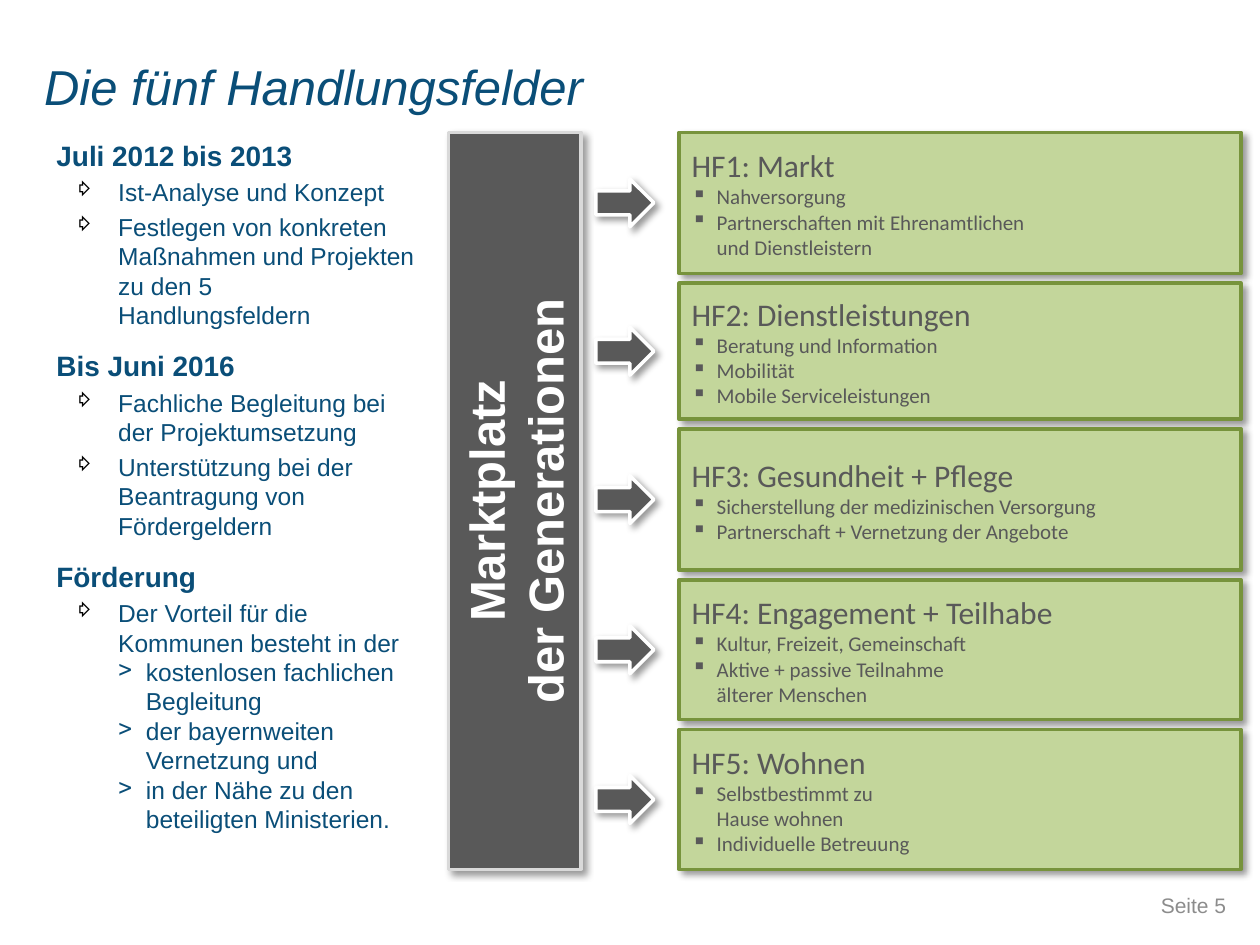
"""Build the slide on the five fields of action."""
from copy import deepcopy

from lxml import etree
from pptx import Presentation, util as u
from pptx.dml.color import RGBColor
from pptx.enum import shapes, text
from pptx.oxml.ns import qn

COLORS = {"navy": "0A4E78", "dark": "595959", "white": "FFFFFF", "silver": "D9D9D9",
          "leaf": "C3D69B", "moss": "77933C", "grey": "8C8C8C", "black": "000000"}
ALIGN, ANCHOR, KIND = text.PP_ALIGN, text.MSO_ANCHOR, shapes.MSO_SHAPE

FORMATS = {
    "title": {"font": {"name": "Arial", "size": u.Pt(28), "italic": True}, "color": "navy"},
    "phase": {"font": {"name": "Arial", "size": u.Pt(16), "bold": True}, "color": "navy",
              "before": 11},
    "step": {"font": {"name": "Arial", "size": u.Pt(14)}, "color": "navy", "before": 3,
             "bullet": ("⇨", 0.49, 0.34, "black", 65)},
    "benefit": {"font": {"name": "Arial", "size": u.Pt(14)}, "color": "navy",
                "bullet": (">", 0.71, 0.22, "navy", 100)},
    "market": {"font": {"name": "Arial", "size": u.Pt(28), "bold": True}, "color": "white",
               "align": ALIGN.CENTER},
    "field": {"font": {"name": "Calibri", "size": u.Pt(18)}, "color": "dark"},
    "topic": {"font": {"name": "Calibri", "size": u.Pt(12)}, "color": "dark",
              "bullet": ("▪", 0.2, 0.2, "dark", 100)},
    "page": {"font": {"name": "Arial", "size": u.Pt(12)}, "color": "grey",
             "align": ALIGN.RIGHT},
}

PHASES = [
    ("phase", "Juli 2012 bis 2013"),
    ("step", "Ist-Analyse und Konzept"),
    ("step", "Festlegen von konkreten Maßnahmen und Projekten zu den 5\vHandlungsfeldern"),
    ("phase", "Bis Juni 2016"),
    ("step", "Fachliche Begleitung bei\vder Projektumsetzung"),
    ("step", "Unterstützung bei der Beantragung von Fördergeldern"),
    ("phase", "Förderung"),
    ("step", "Der Vorteil für die Kommunen besteht in der"),
    ("benefit", "kostenlosen fachlichen\vBegleitung"),
    ("benefit", "der bayernweiten\vVernetzung und"),
    ("benefit", "in der Nähe zu den\vbeteiligten Ministerien."),
]

FIELDS = [
    (11.2, "HF1: Markt",
     ["Nahversorgung", "Partnerschaften mit Ehrenamtlichen\vund Dienstleistern"]),
    (10.8, "HF2: Dienstleistungen",
     ["Beratung und Information", "Mobilität", "Mobile Serviceleistungen"]),
    (11.2, "HF3: Gesundheit + Pflege",
     ["Sicherstellung der medizinischen Versorgung",
      "Partnerschaft + Vernetzung der Angebote"]),
    (11.1, "HF4: Engagement + Teilhabe",
     ["Kultur, Freizeit, Gemeinschaft", "Aktive + passive Teilnahme\välterer Menschen"]),
    (11.1, "HF5: Wohnen",
     ["Selbstbestimmt zu\vHause wohnen", "Individuelle Betreuung"]),
]


class Deck:
    """Hold the style, the current slide and its grid of 100 columns by 75 rows."""

    def __init__(self):
        """Open a title-only slide."""
        self.prs = Presentation()
        self.prs.slide_width, self.prs.slide_height = u.Inches(10), u.Inches(7.5)
        self.slide = self.prs.slides.add_slide(self.prs.slide_layouts[5])

    def place(self, col, row, cols, rows):
        """Turn grid units into left, top, width and height."""
        across, down = self.prs.slide_width / 100, self.prs.slide_height / 75
        return [round(n * unit) for n, unit in
                ((col, across), (row, down), (cols, across), (rows, down))]

    def bullet(self, paragraph, mark, margin, hang, color, percent):
        """Give a paragraph a hanging bullet."""
        props = paragraph._p.get_or_add_pPr()
        props.set("marL", str(u.Inches(margin)))
        props.set("indent", str(-u.Inches(hang)))
        tint = etree.SubElement(props, qn("a:buClr"))
        etree.SubElement(tint, qn("a:srgbClr"), val=COLORS[color])
        etree.SubElement(props, qn("a:buSzPct"), val=str(percent * 1000))
        etree.SubElement(props, qn("a:buChar"), char=mark)

    def fill_text(self, frame, lines, anchor=ANCHOR.MIDDLE):
        """Fill a text frame with (format, wording) lines."""
        frame.word_wrap, frame.vertical_anchor = True, anchor
        for index, (kind, wording) in enumerate(lines):
            style = FORMATS[kind]
            paragraph = frame.add_paragraph() if index else frame.paragraphs[0]
            paragraph.text = wording
            if "bullet" in style:
                self.bullet(paragraph, *style["bullet"])
            paragraph.alignment = style.get("align", ALIGN.LEFT)
            paragraph.space_before = u.Pt(style.get("before", 0) if index else 0)
            for run in paragraph.runs:
                for name, value in style["font"].items():
                    setattr(run.font, name, value)
                run.font.color.rgb = RGBColor.from_string(COLORS[style["color"]])
            for line_break in paragraph._p.findall(qn("a:br")):
                line_break.append(deepcopy(paragraph.runs[0]._r.rPr))

    def title(self, wording, *area):
        """Move and format the title placeholder."""
        heading = self.slide.shapes.title
        heading.left, heading.top, heading.width, heading.height = self.place(*area)
        insets = {"margin_left": 0, "margin_top": 0,
                  "margin_right": u.Inches(0.1), "margin_bottom": u.Inches(0.05)}
        for name, value in insets.items():
            setattr(heading.text_frame, name, value)
        self.fill_text(heading.text_frame, [("title", wording)], ANCHOR.TOP)

    def note(self, lines, *area, anchor=ANCHOR.TOP):
        """Add a text box."""
        box = self.slide.shapes.add_textbox(*self.place(*area))
        self.fill_text(box.text_frame, lines, anchor)

    def block(self, kind, fill, edge, *area, lines=(), turn=0):
        """Add a filled, outlined shape with a soft shadow."""
        shape = self.slide.shapes.add_shape(kind, *self.place(*area))
        shape.rotation = turn
        shape.fill.solid()
        shape.fill.fore_color.rgb = RGBColor.from_string(COLORS[fill])
        shape.line.color.rgb = RGBColor.from_string(COLORS[edge])
        shape.line.width = u.Pt(2)
        shape.shadow.inherit = False
        effects = shape._element.spPr.find(qn("a:effectLst"))
        shadow = etree.SubElement(effects, qn("a:outerShdw"), blurRad=str(u.Pt(4)),
                                  dist=str(u.Pt(3)), dir="2700000", algn="tl",
                                  rotWithShape="0")
        tint = etree.SubElement(shadow, qn("a:srgbClr"), val=COLORS["black"])
        etree.SubElement(tint, qn("a:alpha"), val="40000")
        self.fill_text(shape.text_frame, lines)


def main():
    """Compose and save the slide."""
    deck = Deck()
    top, span = 10.5, 58.5
    deck.title("Die fünf Handlungsfelder", 3.5, 4.5, 83.5, 12.5)
    deck.note(PHASES, 3.5, top, 30.7, 60.6)
    deck.block(KIND.RECTANGLE, "dark", "silver", 11.6, 34.5, span, 10.5, turn=270,
               lines=[("market", "Marktplatz"), ("market", "der Generationen")])
    gap = (span - sum(field[0] for field in FIELDS)) / (len(FIELDS) - 1)
    row = top
    for rows, name, topics in FIELDS:
        deck.block(KIND.RIGHT_ARROW, "dark", "white", 47.3, row + rows / 2 - 1.9, 4.6, 3.8)
        deck.block(KIND.RECTANGLE, "leaf", "moss", 53.9, row, 44.6, rows,
                   lines=[("field", name)] + [("topic", topic) for topic in topics])
        row += rows + gap
    deck.note([("page", "Seite 5")], 86.5, 69.8, 11.8, 4, anchor=ANCHOR.MIDDLE)
    deck.prs.save("out.pptx")


if __name__ == "__main__":
    main()
